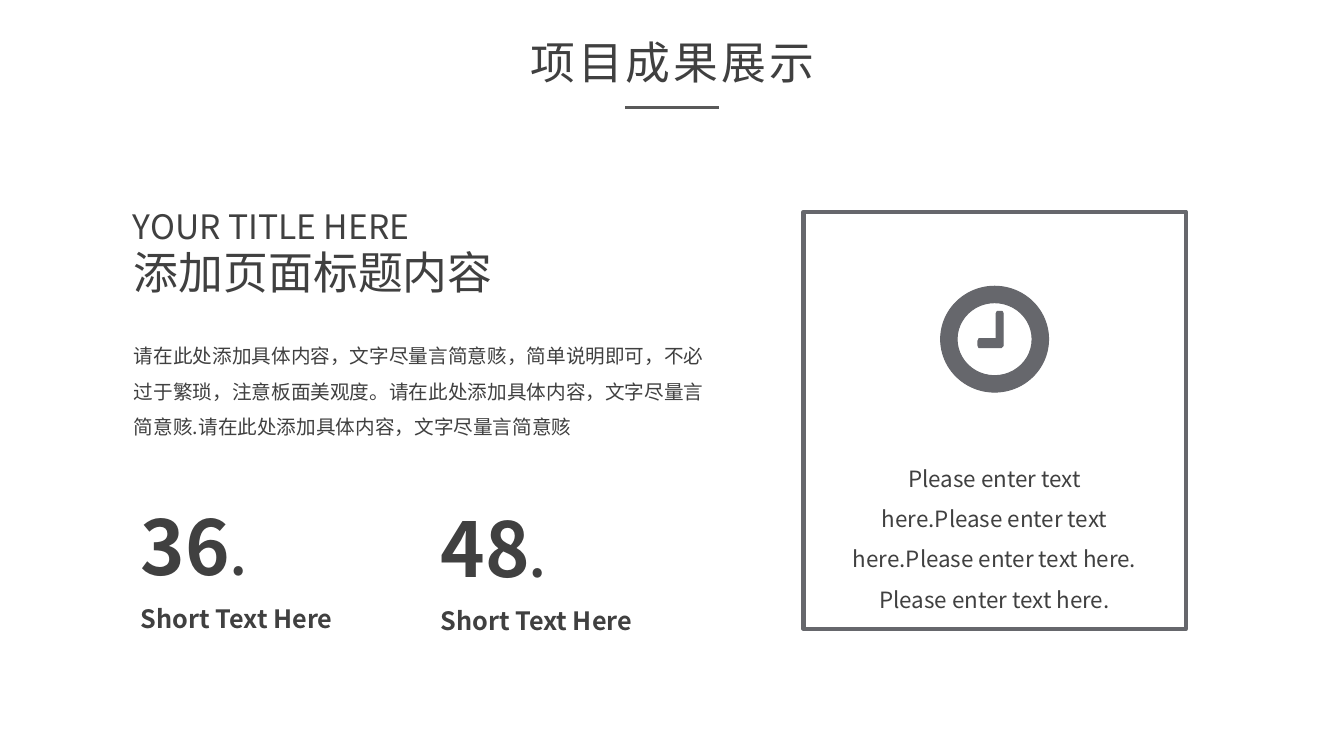
from lxml.etree import SubElement
from pptx import Presentation
from pptx.dml.color import RGBColor
from pptx.enum.shapes import MSO_CONNECTOR as Link, MSO_SHAPE as Kind
from pptx.enum.text import MSO_ANCHOR as Anchor, MSO_AUTO_SIZE as Fit, PP_ALIGN as Align
from pptx.oxml.ns import qn
from pptx.util import Pt

PX = 9144  # 100 px to the inch
FACE = "Noto Sans CJK SC"
INK = RGBColor(0x40, 0x40, 0x40)
RULE = RGBColor(0x59, 0x59, 0x59)
SLATE = RGBColor(0x66, 0x67, 0x6C)
BODY = ("请在此处添加具体内容，文字尽量言简意赅，简单说明即可，不必过于繁琐，注意板面美观度。"
        "请在此处添加具体内容，文字尽量言简意赅.请在此处添加具体内容，文字尽量言简意赅")
NOTE = ("Please enter text here.Please enter text here."
        "Please enter text here. Please enter text here.")
STATS = [("36", 130, 491), ("48", 427, 493)]


def px(*nums):
    return [num * PX for num in nums]


def write(box, runs, align=Align.LEFT, gap=1.0, wrap=True, fit=Fit.SHAPE_TO_FIT_TEXT, track=0):
    """Fill a text shape with one paragraph of (text, size, bold) runs."""
    frame = box.text_frame
    frame.word_wrap = wrap
    frame.auto_size = fit
    frame.vertical_anchor = Anchor.TOP
    para = frame.paragraphs[0]
    para.alignment, para.line_spacing = align, gap
    for text, size, bold in runs:
        run = para.add_run()
        run.text = text
        form = {"size": Pt(size), "bold": bold, "name": FACE}
        for key, val in form.items():
            setattr(run.font, key, val)
        run.font.color.rgb = INK
        props = run.font._element
        SubElement(props, qn("a:ea"), typeface=FACE)
        if track:
            props.set("spc", str(track))


def label(slide, spot, *runs, **form):
    box = slide.shapes.add_textbox(*px(*spot))
    write(box, runs, **form)


def head(slide, text):
    title = slide.shapes.title
    title.left, title.top, title.width, title.height = px(479, 30, 376, 61)
    frame = title.text_frame
    frame.margin_left = frame.margin_right = 7 * PX
    frame.margin_top = frame.margin_bottom = 4 * PX
    write(title, [(text, 32, False)], align=Align.CENTER, track=220)
    line = slide.shapes.add_connector(Link.STRAIGHT, *px(620, 107, 713, 107))
    line.line.color.rgb = RULE
    line.line.width = Pt(2.25)
    SubElement(line._element.spPr, qn("a:effectLst"))


def paint(shape, width, fill=True):
    shape.shadow.inherit = False
    if fill:
        shape.fill.solid()
        shape.fill.fore_color.rgb = SLATE
    else:
        shape.fill.background()
    shape.line.color.rgb = SLATE
    shape.line.width = Pt(width)


def clock(slide):
    ring = slide.shapes.add_shape(Kind.DONUT, *px(933, 284, 107, 105))
    ring.adjustments[0] = 0.155
    paint(ring, 0.75)
    pen = slide.shapes.build_freeform(989, 309, scale=PX)
    pen.add_line_segments([(994, 309), (995, 311), (995, 343), (993, 345), (971, 345),
                           (970, 343), (970, 338), (971, 336), (988, 336), (988, 311)])
    paint(pen.convert_to_shape(), 0.75)


def stat(slide, num, left, top):
    label(slide, (left, top, 248, 101), (num, 54, True), (".", 36, True))
    label(slide, (left, top + 103, 232, 40), ("Short Text Here", 18, True))


def main():
    deck = Presentation()
    deck.slide_width, deck.slide_height = px(1333, 750)
    slide = deck.slides.add_slide(deck.slide_layouts[5])
    head(slide, "项目成果展示")
    card = slide.shapes.add_shape(Kind.RECTANGLE, *px(797, 210, 379, 414))
    paint(card, 3, fill=False)
    label(slide, (123, 238, 379, 64), ("添加页面标题内容", 32, False), wrap=False)
    label(slide, (122, 199, 302, 36), ("YOUR TITLE HERE", 24, False),
          align=Align.JUSTIFY, fit=Fit.NONE)
    label(slide, (123, 325, 591, 112), (BODY, 14, False), gap=1.5)
    for num, left, top in STATS:
        stat(slide, num, left, top)
    label(slide, (831, 443, 311, 127), (NOTE, 16, False), align=Align.CENTER, gap=1.5)
    clock(slide)
    deck.save("out.pptx")


if __name__ == "__main__":
    main()
